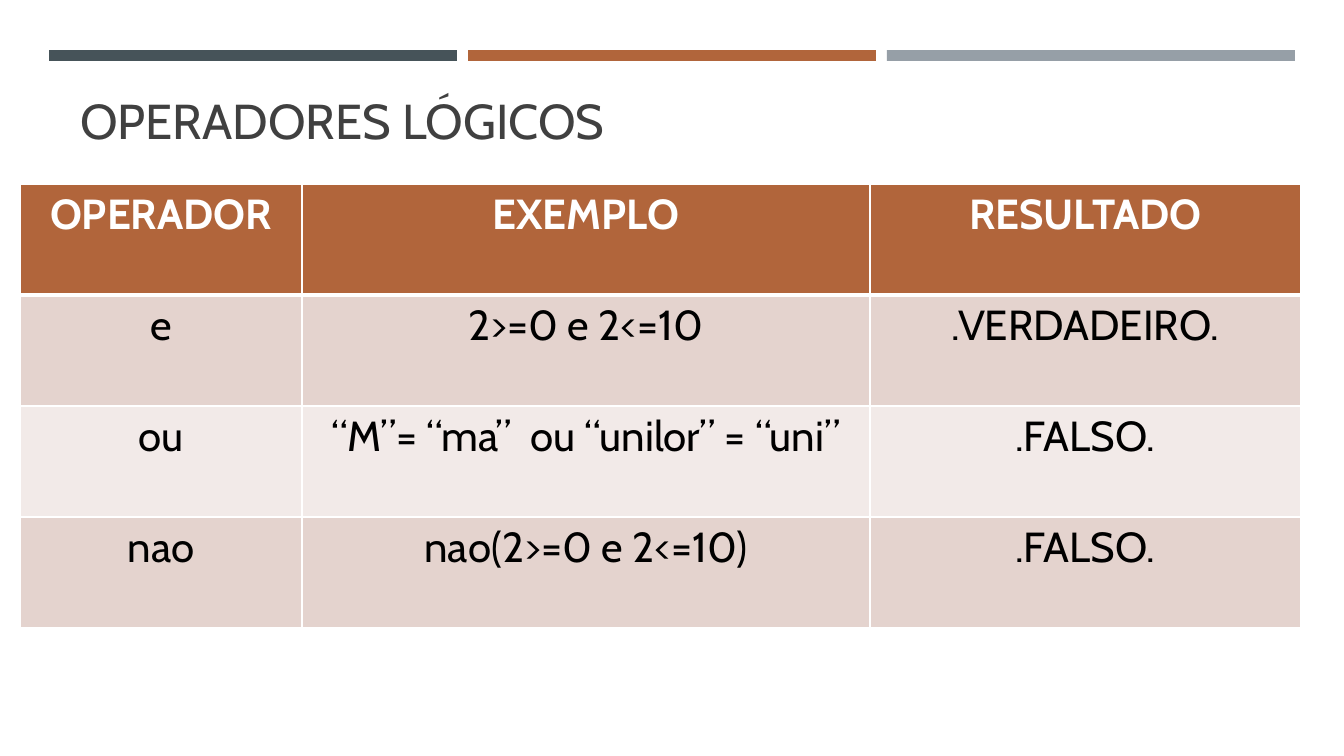
from lxml import etree
from pptx import Presentation
from pptx.dml.color import RGBColor
from pptx.enum.shapes import MSO_SHAPE
from pptx.enum.text import MSO_ANCHOR, PP_ALIGN
from pptx.oxml import parse_xml
from pptx.oxml.ns import nsdecls
from pptx.util import Emu, Pt

RECTANGLE = MSO_SHAPE.RECTANGLE
BOTTOM = MSO_ANCHOR.BOTTOM
CENTER = PP_ALIGN.CENTER

SLATE = RGBColor(0x46, 0x53, 0x59)
RUST = RGBColor(0xB1, 0x65, 0x3B)
STEEL = RGBColor(0x96, 0x9F, 0xA7)
CHARCOAL = RGBColor(0x40, 0x40, 0x40)
BLACK = RGBColor(0, 0, 0)
WHITE = RGBColor(0xFF, 0xFF, 0xFF)
ROW_FILLS = [RGBColor(0xE4, 0xD3, 0xCE), RGBColor(0xF2, 0xEA, 0xE8)]

# Content
TITLE = "OPERADORES LÓGICOS"
OPERATORS = [
    ("OPERADOR", "EXEMPLO", "RESULTADO"),
    ("e", "2>=0 e 2<=10", ".VERDADEIRO."),
    ("ou", "“M”= “ma”  ou “unilor” = “uni”", ".FALSO."),
    ("nao", "nao(2>=0 e 2<=10)", ".FALSO."),
]

# Layout in px
SLIDE = (1344, 756)
BAR_LEFT, BAR_TOP, BAR_WIDTH, BAR_HEIGHT, BAR_GAP = 49, 50, 408, 11, 11
TITLE_BOX = (65, 84, 555, 70)
TABLE_LEFT, TABLE_TOP, ROW_HEIGHT = 20, 184, 111
COLUMN_WIDTHS = [282, 568, 431]

HEADER_FONT = dict(name="Cabin", size=Pt(30), bold=True)
BODY_FONT = dict(HEADER_FONT, bold=False)
TITLE_FONT = dict(name="Cabin", size=Pt(35))


def px(value):
    return Emu(round(value * 914400 / 100.8))


def write(frame, text, color, font_format):
    paragraph = frame.paragraphs[0]
    paragraph.alignment = CENTER
    run = paragraph.add_run()
    run.text = text
    run.font.color.rgb = color
    for name, value in font_format.items():
        setattr(run.font, name, value)
    return run


def add_borders(cell, top, bottom):
    properties = cell._tc.get_or_add_tcPr()
    for index, (side, points) in enumerate(
            [("L", 1), ("R", 1), ("T", top), ("B", bottom)]):
        properties.insert(index, parse_xml(
            f'<a:ln{side} {nsdecls("a")} w="{Pt(points)}"><a:solidFill>'
            f'<a:srgbClr val="{WHITE}"/></a:solidFill></a:ln{side}>'))


prs = Presentation()
prs.slide_width, prs.slide_height = map(px, SLIDE)
slide = prs.slides.add_slide(prs.slide_layouts[6])

# Coloured bars
for index, color in enumerate([SLATE, RUST, STEEL]):
    left = BAR_LEFT + index * (BAR_WIDTH + BAR_GAP)
    bar = slide.shapes.add_shape(
        RECTANGLE, *map(px, (left, BAR_TOP, BAR_WIDTH, BAR_HEIGHT)))
    bar.shadow.inherit = False
    bar.fill.solid()
    bar.fill.fore_color.rgb = color
    bar.line.fill.background()

# Title with a soft text shadow
title_frame = slide.shapes.add_textbox(*map(px, TITLE_BOX)).text_frame
title_frame.word_wrap = False
title_frame.vertical_anchor = BOTTOM
title_run = write(title_frame, TITLE, CHARCOAL, TITLE_FONT)
text_fill = title_run.font._element.find(
    etree.QName("http://schemas.openxmlformats.org/drawingml/2006/main", "solidFill"))
text_fill.addnext(parse_xml(
    f'<a:effectLst {nsdecls("a")}><a:outerShdw blurRad="38100" dist="38100" '
    'dir="2700000"><a:srgbClr val="000000"><a:alpha val="43000"/></a:srgbClr>'
    '</a:outerShdw></a:effectLst>'))

# Operator table
table = slide.shapes.add_table(
    len(OPERATORS), len(COLUMN_WIDTHS),
    *map(px, (TABLE_LEFT, TABLE_TOP, sum(COLUMN_WIDTHS),
              ROW_HEIGHT * len(OPERATORS)))).table
for column, width in zip(table.columns, COLUMN_WIDTHS):
    column.width = px(width)
for row_index, operator in enumerate(OPERATORS):
    table.rows[row_index].height = px(ROW_HEIGHT)
    is_header = row_index == 0
    for column_index, text in enumerate(operator):
        cell = table.cell(row_index, column_index)
        cell.fill.solid()
        cell.fill.fore_color.rgb = RUST if is_header else ROW_FILLS[(row_index - 1) % 2]
        add_borders(cell, top=3 if row_index == 1 else 1, bottom=3 if is_header else 1)
        write(cell.text_frame, text, WHITE if is_header else BLACK,
              HEADER_FONT if is_header else BODY_FONT)

prs.save("out.pptx")
